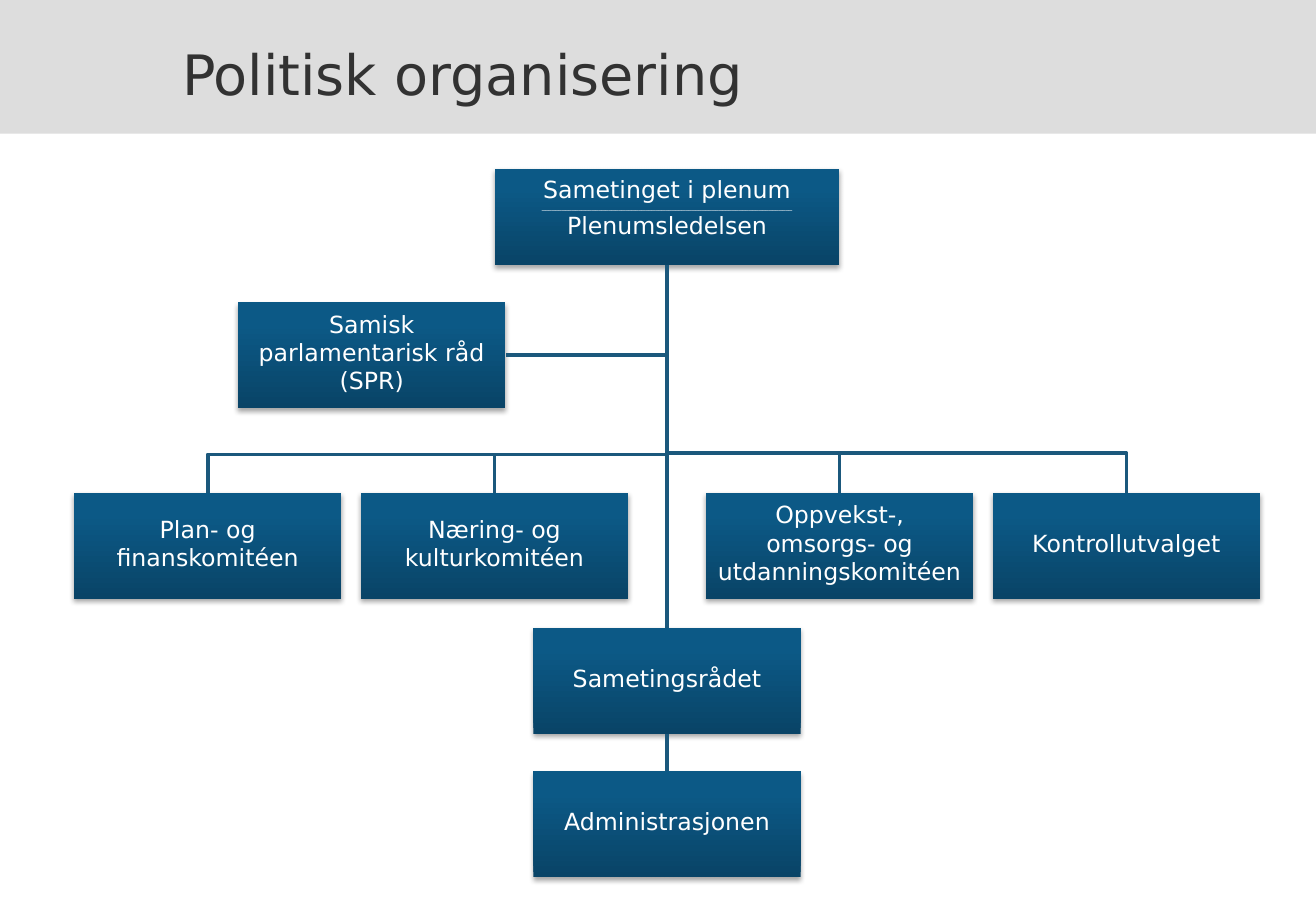
from dataclasses import dataclass

from lxml import etree
from pptx import Presentation
from pptx import util as u
from pptx.dml.color import RGBColor
from pptx.enum import shapes, text
from pptx.oxml.ns import qn

AXIS = 5.49
TOP, BOTTOM, RIGHT = 0, 2, 3


@dataclass(frozen=True)
class Theme:
    """Colours, font and type sizes of the slide."""
    font: str = "DejaVu Sans"
    band: str = "DDDDDD"
    heading: str = "323232"
    label: str = "FFFFFF"
    line: str = "1B587C"
    shadow: str = "000000"
    gradient: tuple = ((0, "094467"), (80, "0C5986"), (100, "0A5A89"))
    heading_size: int = 33
    label_size: int = 14
    rule_size: int = 4


THEME = Theme()


def add_element(parent, tag, **attributes):
    """Append a DrawingML element and return it."""
    values = {name: str(value) for name, value in attributes.items()}
    return etree.SubElement(parent, qn(tag), values)


def style_font(font, size, color):
    """Apply the theme font with a size and a colour."""
    font.name = THEME.font
    font.size = u.Pt(size)
    font.color.rgb = RGBColor.from_string(color)


def add_header(page, title):
    """Draw the grey band and the slide title."""
    band = page.shapes.add_shape(shapes.MSO_SHAPE.RECTANGLE, 0, 0,
                                 u.Inches(10.83), u.Inches(1.1))
    band.shadow.inherit = False
    band.fill.solid()
    band.fill.fore_color.rgb = RGBColor.from_string(THEME.band)
    band.line.fill.background()
    box = page.shapes.add_textbox(u.Inches(1.4), 0, u.Inches(7.87), u.Inches(1.18))
    frame = box.text_frame
    frame.word_wrap = True
    frame.vertical_anchor = text.MSO_ANCHOR.MIDDLE
    frame.text = title
    para = frame.paragraphs[0]
    para.line_spacing = u.Pt(42)
    style_font(para.runs[0].font, THEME.heading_size, THEME.heading)


def paint_box(box):
    """Give a box the theme gradient and a soft shadow."""
    box.fill.gradient()
    box.fill.gradient_angle = 90
    stops = box._element.spPr.find(".//" + qn("a:gsLst"))
    stops.clear()
    for position, color in THEME.gradient:
        stop = add_element(stops, "a:gs", pos=position * 1000)
        add_element(stop, "a:srgbClr", val=color)
    box.line.fill.background()
    box.shadow.inherit = False
    effects = box._element.spPr.find(qn("a:effectLst"))
    shadow = add_element(effects, "a:outerShdw", blurRad=u.Pt(3.1), dist=u.Pt(1.8),
                         dir=5400000, rotWithShape=0)
    color = add_element(shadow, "a:srgbClr", val=THEME.shadow)
    add_element(color, "a:alpha", val=35000)


def add_unit(page, label, center, top, width=2.2, height=0.87,
             anchor=text.MSO_ANCHOR.MIDDLE):
    """Draw one unit of the chart, centred on a horizontal position."""
    box = page.shapes.add_shape(shapes.MSO_SHAPE.RECTANGLE, u.Inches(center - width / 2),
                                u.Inches(top), u.Inches(width), u.Inches(height))
    paint_box(box)
    frame = box.text_frame
    frame.word_wrap = True
    frame.vertical_anchor = anchor
    frame.margin_bottom = u.Inches(0.1)
    frame.text = label
    for para in frame.paragraphs:
        para.alignment = text.PP_ALIGN.CENTER
        size = THEME.rule_size if para.text.startswith("_") else THEME.label_size
        for span in para.runs:
            style_font(span.font, size, THEME.label)
    return box


def add_link(page, kind, upper, lower, lower_side=TOP):
    """Join the bottom of the upper box to a side of the lower box."""
    link = page.shapes.add_connector(kind, 0, 0, 0, 0)
    link.begin_connect(upper, BOTTOM)
    link.end_connect(lower, lower_side)
    link.line.color.rgb = RGBColor.from_string(THEME.line)
    link.line.width = u.Pt(2)
    add_element(link._element.spPr, "a:effectLst")
    return link


def add_elbow(page, upper, lower, lower_side=TOP, bend=None):
    """Add a link that runs down first, then sideways to the lower box."""
    link = add_link(page, shapes.MSO_CONNECTOR.ELBOW, upper, lower, lower_side)
    across, down = link.end_x - link.begin_x, link.end_y - link.begin_y
    middle_x, middle_y = link.begin_x + across // 2, link.begin_y + down // 2
    link.width, link.height = down, abs(across)
    link.left, link.top = middle_x - down // 2, middle_y - abs(across) // 2
    frame = link._element.spPr.find(qn("a:xfrm"))
    frame.set("flipH", "1" if across > 0 else "0")
    frame.set("rot", "16200000" if across > 0 else "5400000")
    geometry = link._element.spPr.find(qn("a:prstGeom"))
    if bend is None:
        geometry.set("prst", "bentConnector2")
    else:
        add_element(geometry.find(qn("a:avLst")), "a:gd", name="adj1",
                    fmla=f"val {round(bend * 100000)}")


def main():
    """Build the organisation chart and save it."""
    deck = Presentation()
    deck.slide_width, deck.slide_height = u.Inches(10.83), u.Inches(7.5)
    page = deck.slides.add_slide(deck.slide_layouts[6])
    add_header(page, "Politisk organisering")

    plenum_label = "\n".join(["Sametinget i plenum", "_" * 75, "Plenumsledelsen"])
    plenum = add_unit(page, plenum_label, AXIS, 1.39, 2.83, 0.79, text.MSO_ANCHOR.TOP)
    parliament = add_unit(page, "Samisk parlamentarisk råd\n(SPR)", 3.06, 2.49)
    committees = [
        ("Plan- og finanskomitéen", -3.78, 0.83),
        ("Næring- og kulturkomitéen", -1.42, 0.83),
        ("Oppvekst-, omsorgs- og utdanningskomitéen", 1.42, 0.825),
        ("Kontrollutvalget", 3.78, 0.825),
    ]
    branches = [(add_unit(page, label, AXIS + offset, 4.06), bend)
                for label, offset, bend in committees]
    council = add_unit(page, "Sametingsrådet", AXIS, 5.17)
    administration = add_unit(page, "Administrasjonen", AXIS, 6.35)

    for upper, lower in ((plenum, council), (council, administration)):
        add_link(page, shapes.MSO_CONNECTOR.STRAIGHT, upper, lower)
    add_elbow(page, plenum, parliament, RIGHT)
    for committee, bend in branches:
        add_elbow(page, plenum, committee, bend=bend)
    deck.save("out.pptx")


if __name__ == "__main__":
    main()
